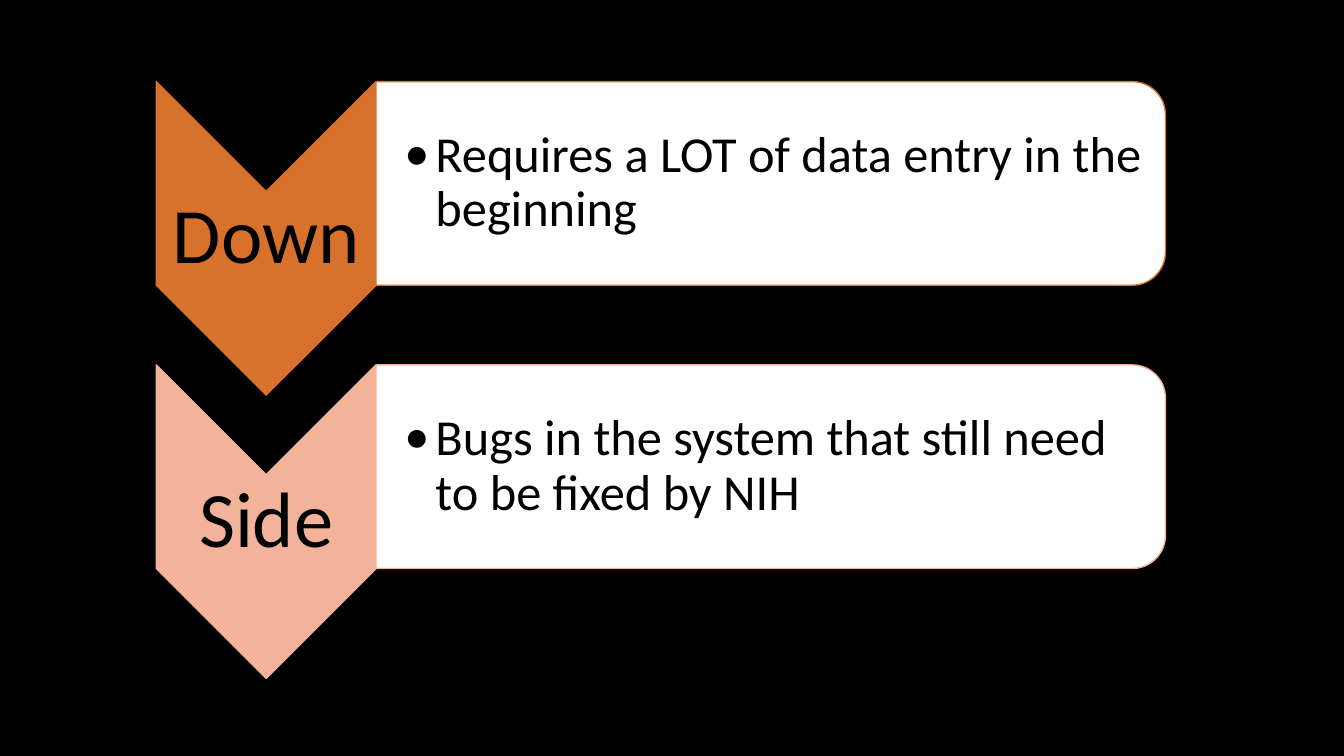
from math import cos, pi, sin

from lxml import etree
from pptx import Presentation
from pptx.dml.color import RGBColor
from pptx.enum.text import MSO_ANCHOR, PP_ALIGN
from pptx.oxml.ns import qn
from pptx.util import Inches, Pt

COLORS = {"black": "000000", "white": "FFFFFF", "orange": "D7712C", "peach": "F3B39B"}
LEFT, MIDDLE, RIGHT = 1.55, 3.73, 11.56
TOP, STEP, HEIGHT = 0.81, 2.81, 2.02
POINT = (MIDDLE - LEFT) / 2
RADIUS = 0.33
ARC_STEPS = 16
ROWS = [
    ("Down", "Requires a LOT of data entry in the beginning", "orange"),
    ("Side", "Bugs in the system that still need to be fixed by NIH", "peach"),
]


def add_outline(points, fill, line):
    corners = [(Inches(x), Inches(y)) for x, y in points]
    builder = page.shapes.build_freeform(*corners[0])
    builder.add_line_segments(corners[1:], close=True)
    shape = builder.convert_to_shape()
    shape.shadow.inherit = False
    shape.fill.solid()
    shape.fill.fore_color.rgb = RGBColor.from_string(COLORS[fill])
    shape.line.color.rgb = RGBColor.from_string(COLORS[line])
    shape.line.width = Pt(1)
    return shape


def set_text(shape, text, size, align, insets):
    frame = shape.text_frame
    frame.word_wrap = True
    frame.vertical_anchor = MSO_ANCHOR.MIDDLE
    frame.margin_left, frame.margin_top, frame.margin_right, frame.margin_bottom = map(Inches, insets)
    para = frame.paragraphs[0]
    para.text = text
    para.alignment = align
    para.line_spacing = 0.9
    para.font.name = "Calibri"
    para.font.size = Pt(size)
    para.font.color.rgb = RGBColor.from_string(COLORS["black"])
    return para


deck = Presentation()
deck.slide_width, deck.slide_height = Inches(13.33), Inches(7.5)
page = deck.slides.add_slide(deck.slide_layouts[6])
page.background.fill.solid()
page.background.fill.fore_color.rgb = RGBColor.from_string(COLORS["black"])

for index, (label, detail, color) in enumerate(ROWS):
    top = TOP + index * STEP
    bottom = top + HEIGHT
    center = LEFT + POINT

    chevron = add_outline(
        [(LEFT, top), (center, top + POINT), (MIDDLE, top),
         (MIDDLE, bottom), (center, bottom + POINT), (LEFT, bottom)],
        color, color)
    set_text(chevron, label, 56, PP_ALIGN.CENTER, (0.04, 1.13, 0.04, 1.13))

    angles = [pi / 2 * step / ARC_STEPS for step in range(ARC_STEPS + 1)]
    upper = [(RIGHT - RADIUS * (1 - sin(a)), top + RADIUS * (1 - cos(a))) for a in angles]
    lower = [(x, top + bottom - y) for x, y in reversed(upper)]
    panel = add_outline([(MIDDLE, top), *upper, *lower, (MIDDLE, bottom)], "white", color)
    para = set_text(panel, detail, 36, PP_ALIGN.LEFT, (0.28, 0.12, 0.12, 0.12))
    properties = para._p.get_or_add_pPr()
    properties.set("marL", str(Inches(0.31)))
    properties.set("indent", str(-Inches(0.31)))
    bullet_font = etree.Element(qn("a:buFont"), typeface="Calibri")
    properties.find(qn("a:lnSpc")).addnext(bullet_font)
    bullet_font.addnext(etree.Element(qn("a:buChar"), char="•"))

deck.save("out.pptx")
